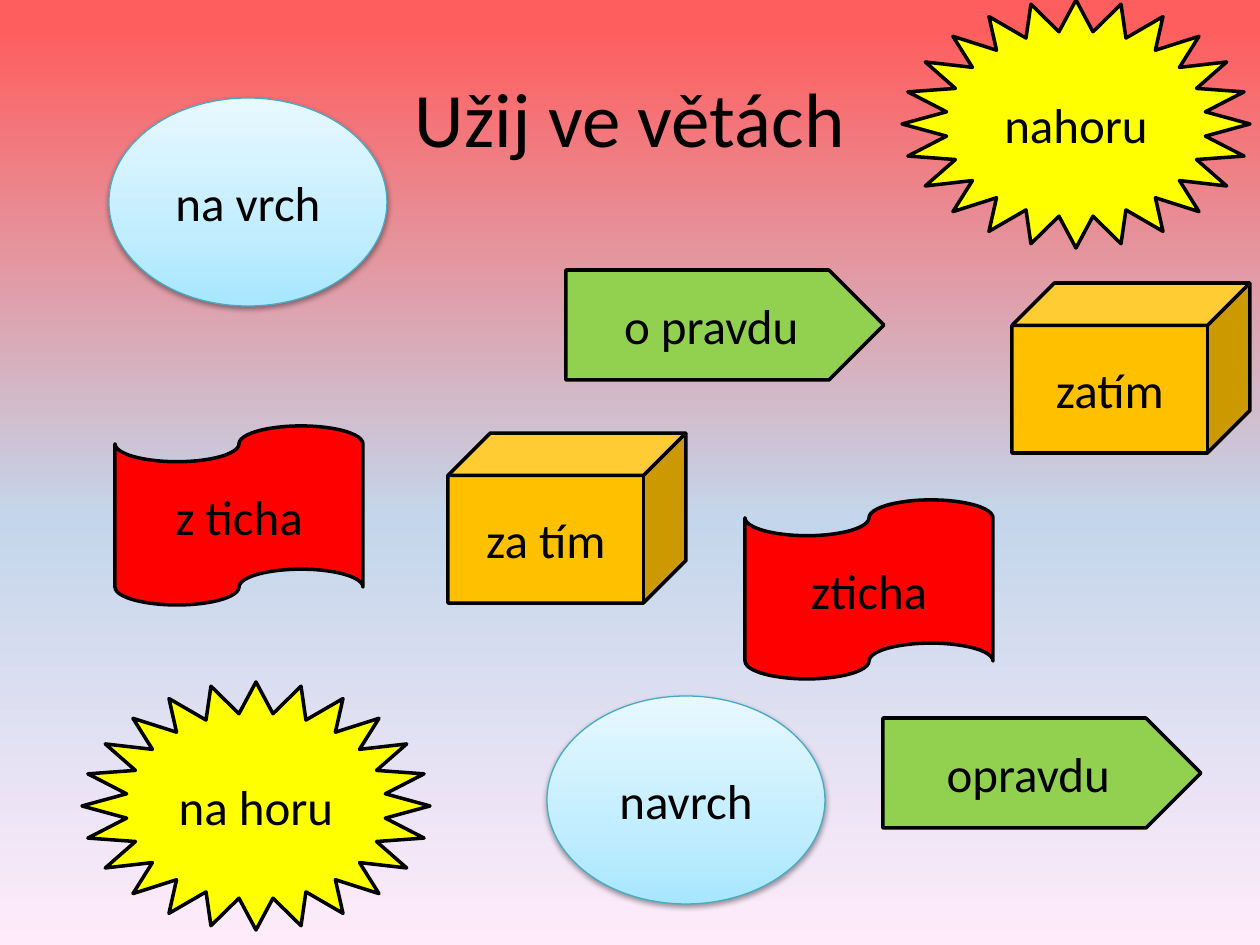
from dataclasses import dataclass

from lxml import etree
from pptx import Presentation
from pptx import util as u
from pptx.dml.color import RGBColor
from pptx.enum import shapes, text
from pptx.oxml.ns import qn

PX = 914400 / 126


@dataclass(frozen=True)
class Theme:
    font: str = "Calibri"
    title_size: int = 44
    word_size: int = 28
    ink: str = "000000"
    yellow: str = "FFFF00"
    red: str = "FF0000"
    green: str = "92D050"
    orange: str = "FFC000"
    oval_line: str = "46AAC5"
    oval_stops: tuple = ((0, "A7E6FF"), (35, "C1EDFF"), (100, "E7F8FF"))
    sky_stops: tuple = ((3, "FF5E5E"), (55, "C4D6EB"), (100, "FFEBFA"))


THEME = Theme()
KIND = shapes.MSO_SHAPE

WORD_PAIRS = [
    (KIND.STAR_24_POINT, (348, 248), THEME.yellow,
     [("nahoru", 902, 0), ("na horu", 82, 682)]),
    (KIND.OVAL, (278, 208), THEME.oval_stops,
     [("na vrch", 109, 98), ("navrch", 547, 696)]),
    (KIND.FLOWCHART_PUNCHED_TAPE, (248, 179), THEME.red,
     [("z ticha", 115, 426), ("zticha", 745, 500)]),
    (KIND.PENTAGON, (318, 110), THEME.green,
     [("o pravdu", 566, 270), ("opravdu", 883, 718)]),
    (KIND.CUBE, (238, 170), THEME.orange,
     [("za tím", 448, 433), ("zatím", 1012, 283)]),
]


def px(length):
    return u.Emu(round(length * PX))


def add_color(parent, color):
    return etree.SubElement(parent, qn("a:srgbClr"), val=color)


def fill_gradient(fill, element, stops, angle):
    fill.gradient()
    fill.gradient_angle = angle
    stop_list = element.find(f".//{qn('a:gsLst')}")
    for stop in list(stop_list):
        stop_list.remove(stop)
    for position, color in stops:
        stop = etree.SubElement(stop_list, qn("a:gs"), pos=str(position * 1000))
        add_color(stop, color)


def add_soft_shadow(shape):
    effects = shape._element.spPr.find(qn("a:effectLst"))
    shadow = etree.SubElement(effects, qn("a:outerShdw"), blurRad="40000",
                              dist="20000", dir="5400000", rotWithShape="0")
    etree.SubElement(add_color(shadow, THEME.ink), qn("a:alpha"), val="38000")


def set_text(shape, words, size):
    frame = shape.text_frame
    frame.text = words
    frame.word_wrap = True
    frame.vertical_anchor = text.MSO_ANCHOR.MIDDLE
    paragraph = frame.paragraphs[0]
    paragraph.alignment = text.PP_ALIGN.CENTER
    paragraph.font.name = THEME.font
    paragraph.font.size = u.Pt(size)
    paragraph.font.color.rgb = RGBColor.from_string(THEME.ink)


def add_title(slide, words):
    title = slide.shapes.title
    title.left, title.top, title.width, title.height = map(px, (63, 38, 1134, 158))
    set_text(title, words, THEME.title_size)


def add_word(slide, kind, size, paint, words, left, top):
    shape = slide.shapes.add_shape(kind, *map(px, (left, top, *size)))
    shape.shadow.inherit = False
    if kind == KIND.OVAL:
        fill_gradient(shape.fill, shape._element, paint, 90)
        add_soft_shadow(shape)
        line_color, line_width = THEME.oval_line, 0.75
    else:
        shape.fill.solid()
        shape.fill.fore_color.rgb = RGBColor.from_string(paint)
        line_color, line_width = THEME.ink, 2
    shape.line.color.rgb = RGBColor.from_string(line_color)
    shape.line.width = u.Pt(line_width)
    set_text(shape, words, THEME.word_size)


def main():
    presentation = Presentation()
    presentation.slide_width, presentation.slide_height = px(1260), px(945)
    slide = presentation.slides.add_slide(presentation.slide_layouts[5])
    fill_gradient(slide.background.fill, slide._element, THEME.sky_stops, 270)
    add_title(slide, "Užij ve větách")
    for kind, size, paint, places in WORD_PAIRS:
        for words, left, top in places:
            add_word(slide, kind, size, paint, words, left, top)
    presentation.save("out.pptx")


if __name__ == "__main__":
    main()
